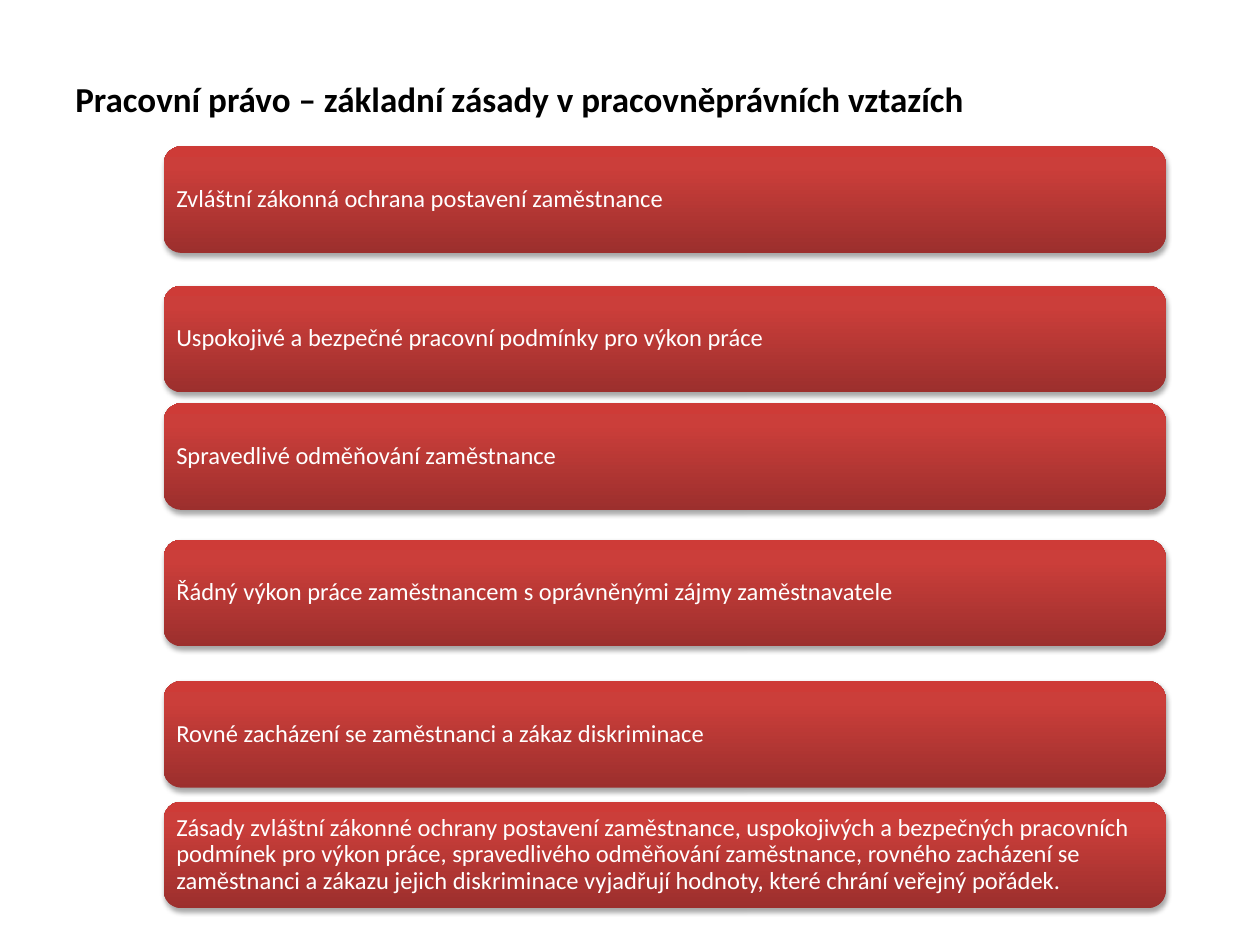
import copy
from dataclasses import dataclass

import lxml.etree
import pptx
import pptx.dml.color
import pptx.enum.shapes
import pptx.enum.text
import pptx.oxml
import pptx.oxml.ns
import pptx.util

Cm = pptx.util.Cm
Pt = pptx.util.Pt
qn = pptx.oxml.ns.qn


@dataclass(frozen=True)
class Theme:
    font: str = "Calibri"
    title_size: int = 20
    bar_size: int = 14
    title_color: str = "000000"
    bar_text: str = "FFFFFF"
    shadow: str = "000000"
    gradient: tuple = ((0, "9C2F2D"), (0.8, "CB3E3A"), (1, "CE3B37"))


THEME = Theme()
TITLE = "Pracovní právo – základní zásady v pracovněprávních vztazích"

# Top edge in centimetres and wording of each principle
PRINCIPLES = (
    (2.95, "Zvláštní zákonná ochrana postavení zaměstnance"),
    (5.76, "Uspokojivé a bezpečné pracovní podmínky pro výkon práce"),
    (8.13, "Spravedlivé odměňování zaměstnance"),
    (10.88, "Řádný výkon práce zaměstnancem s oprávněnými zájmy zaměstnavatele"),
    (13.73, "Rovné zacházení se zaměstnanci a zákaz diskriminace"),
    (16.16, "Zásady zvláštní zákonné ochrany postavení zaměstnance, "
            "uspokojivých a bezpečných pracovních podmínek pro výkon práce, "
            "spravedlivého odměňování zaměstnance, rovného zacházení se "
            "zaměstnanci a zákazu jejich diskriminace vyjadřují hodnoty, "
            "které chrání veřejný pořádek."),
)


def write_text(box, text, *, size, color, anchor, bold=False, line_spacing=1.0,
               inset=None):
    frame = box.text_frame
    frame.word_wrap = True
    frame.vertical_anchor = anchor
    if inset is not None:
        frame.margin_left = frame.margin_right = inset
        frame.margin_top = frame.margin_bottom = inset
    para = frame.paragraphs[0]
    para.alignment = pptx.enum.text.PP_ALIGN.LEFT
    para.line_spacing = line_spacing
    span = para.add_run()
    span.text = text
    span.font.name = THEME.font
    span.font.size = Pt(size)
    span.font.bold = bold
    span.font.color.rgb = pptx.dml.color.RGBColor.from_string(color)


def fill_gradient(shape, stops):
    fill = shape.fill
    fill.gradient()
    fill.gradient_angle = 90
    # The default gradient has two stops; add the missing ones
    stop_list = shape.element.spPr.find(".//" + qn("a:gsLst"))
    while len(stop_list) < len(stops):
        stop_list.append(copy.deepcopy(stop_list[-1]))
    for stop, (position, color) in zip(fill.gradient_stops, stops):
        stop.position = position
        stop.color.rgb = pptx.dml.color.RGBColor.from_string(color)


def add_shadow(shape):
    shape.shadow.inherit = False
    effects = shape.element.spPr.find(qn("a:effectLst"))
    shadow = lxml.etree.SubElement(
        effects, qn("a:outerShdw"), blurRad=str(Pt(3.1)), dist=str(Pt(1.8)),
        dir="5400000", rotWithShape="0")
    color = lxml.etree.SubElement(shadow, qn("a:srgbClr"), val=THEME.shadow)
    lxml.etree.SubElement(color, qn("a:alpha"), val="35000")


def add_title(page, text):
    box = page.shapes.add_textbox(Cm(1.27), Cm(0.76), Cm(20.83), Cm(1.78))
    write_text(box, text, size=THEME.title_size, color=THEME.title_color, bold=True,
               anchor=pptx.enum.text.MSO_ANCHOR.BOTTOM)


def add_bar(page, top, text):
    bar = page.shapes.add_shape(
        pptx.enum.shapes.MSO_SHAPE.ROUNDED_RECTANGLE,
        Cm(3.3), Cm(top), Cm(20.2), Cm(2.15))
    fill_gradient(bar, THEME.gradient)
    bar.line.fill.background()
    add_shadow(bar)
    write_text(bar, text, size=THEME.bar_size, color=THEME.bar_text,
               line_spacing=0.9, inset=Cm(0.15),
               anchor=pptx.enum.text.MSO_ANCHOR.MIDDLE)


def main():
    deck = pptx.Presentation()
    deck.slide_width, deck.slide_height = Cm(25.4), Cm(19.05)
    page = deck.slides.add_slide(deck.slide_layouts[6])

    # Heading
    add_title(page, TITLE)

    # One bar per principle
    for top, text in PRINCIPLES:
        add_bar(page, top, text)

    deck.save("out.pptx")


if __name__ == "__main__":
    main()
